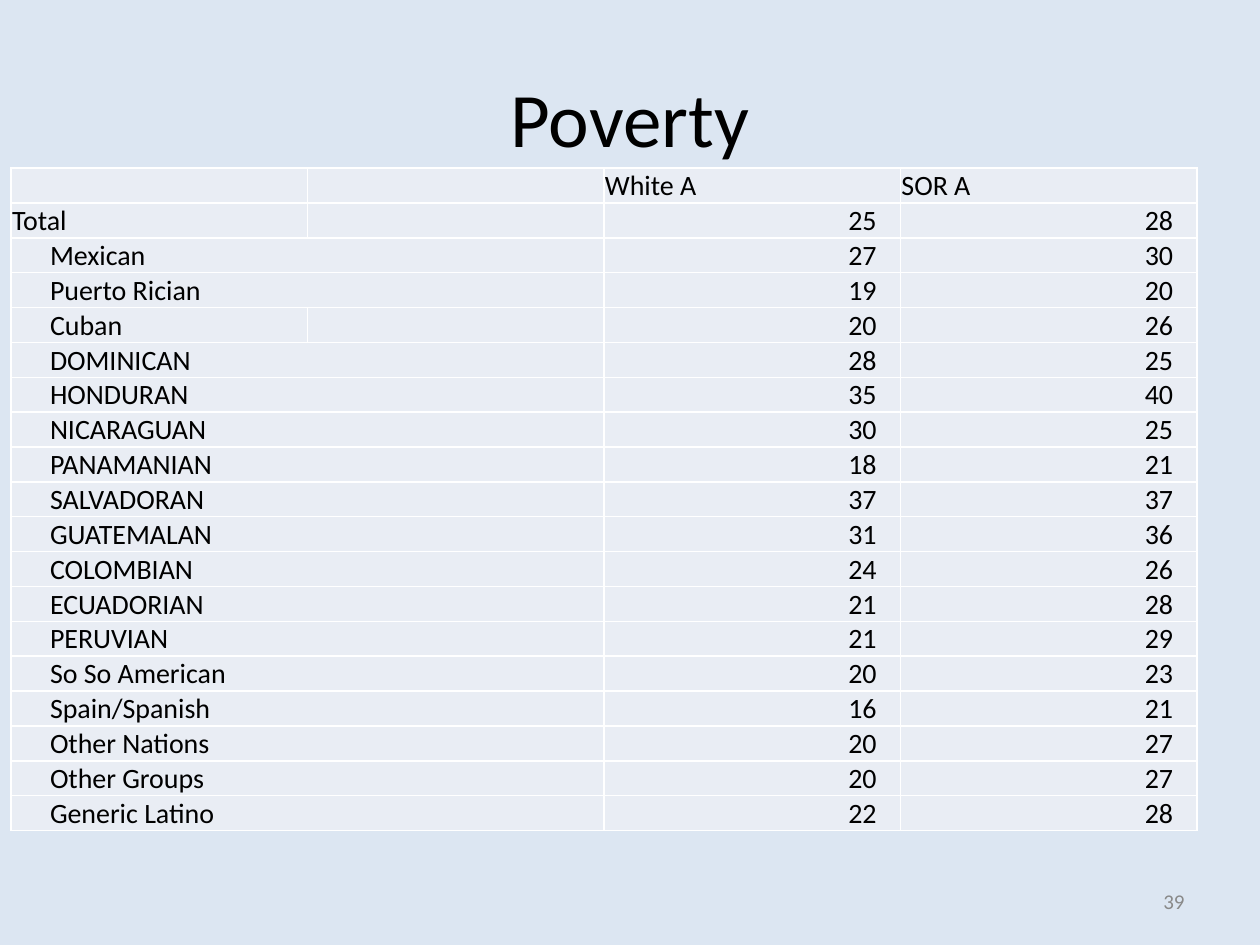
from lxml import etree
from pptx import Presentation
from pptx.dml.color import RGBColor
from pptx.enum.text import MSO_ANCHOR, PP_ALIGN
from pptx.oxml.ns import qn
from pptx.util import Pt

EMU_PER_PX = 914400 / 126
LEFT, CENTER, RIGHT = PP_ALIGN.LEFT, PP_ALIGN.CENTER, PP_ALIGN.RIGHT
MIDDLE, BOTTOM = MSO_ANCHOR.MIDDLE, MSO_ANCHOR.BOTTOM
TITLE_ONLY = 5
INDENT, NUMBER_INSET = 39, 24
SPLIT_ROWS = ("", "Total", "Cuban")
FLUSH_ROWS = ("", "Total")

POVERTY = [
    ("", "White A", "SOR A"),
    ("Total", 25, 28),
    ("Mexican", 27, 30),
    ("Puerto Rician", 19, 20),
    ("Cuban", 20, 26),
    ("DOMINICAN", 28, 25),
    ("HONDURAN", 35, 40),
    ("NICARAGUAN", 30, 25),
    ("PANAMANIAN", 18, 21),
    ("SALVADORAN", 37, 37),
    ("GUATEMALAN", 31, 36),
    ("COLOMBIAN", 24, 26),
    ("ECUADORIAN", 21, 28),
    ("PERUVIAN", 21, 29),
    ("So So American", 20, 23),
    ("Spain/Spanish", 16, 21),
    ("Other Nations", 20, 27),
    ("Other Groups", 20, 27),
    ("Generic Latino", 22, 28),
]


def px(length):
    """Turn pixels into EMU."""
    return round(length * EMU_PER_PX)


def color(value):
    """Turn a hex string into a colour."""
    return RGBColor.from_string(value)


def assign(target, values):
    """Set every attribute named in a dict."""
    for name, value in values.items():
        setattr(target, name, value)


class SlideBuilder:
    """Hold the style and the current slide."""

    font = "Calibri"
    ink = "000000"
    cell_fill = "E9EDF4"
    border = "FFFFFF"
    cell_size = 16

    def __init__(self, deck, background):
        """Add a title-only page with a plain background."""
        self.page = deck.slides.add_slide(deck.slide_layouts[TITLE_ONLY])
        fill = self.page.background.fill
        fill.solid()
        fill.fore_color.rgb = color(background)

    def paragraph(self, frame, text, size, align, ink):
        """Put one styled paragraph into a text frame."""
        para = frame.paragraphs[0]
        para.alignment = align
        if text:
            span = para.add_run()
            span.text = text
            assign(span.font, {"name": self.font, "size": Pt(size), "bold": False})
            span.font.color.rgb = color(ink)
        etree.SubElement(para._p, qn("a:endParaRPr"), sz=str(size * 100))

    def title(self, text, left, top, width, height):
        """Place and format the title placeholder."""
        box = self.page.shapes.title
        assign(box, {"left": px(left), "top": px(top), "width": px(width), "height": px(height)})
        box.text_frame.vertical_anchor = MIDDLE
        self.paragraph(box.text_frame, text, 44, CENTER, self.ink)

    def text(self, text, left, top, width, height, size, align, ink):
        """Add a wrapped text box."""
        box = self.page.shapes.add_textbox(px(left), px(top), px(width), px(height))
        assign(box.text_frame, {"word_wrap": True, "vertical_anchor": MIDDLE})
        self.paragraph(box.text_frame, text, size, align, ink)

    def cell(self, cell, text, align=LEFT, left=1, right=1):
        """Format one table cell and set its text."""
        assign(cell, {
            "margin_left": px(left), "margin_right": px(right),
            "margin_top": px(1), "margin_bottom": 0, "vertical_anchor": BOTTOM,
        })
        properties = cell._tc.get_or_add_tcPr()
        for side in ("L", "R", "T", "B"):
            line = etree.SubElement(properties, qn(f"a:ln{side}"), w=str(Pt(1)))
            paint = etree.SubElement(line, qn("a:solidFill"))
            etree.SubElement(paint, qn("a:srgbClr"), val=self.border)
        cell.fill.solid()
        cell.fill.fore_color.rgb = color(self.cell_fill)
        self.paragraph(cell.text_frame, text, self.cell_size, align, self.ink)

    def table(self, rows, left, top, width, height):
        """Add a table whose labels span two columns unless split."""
        table = self.page.shapes.add_table(
            len(rows), 4, px(left), px(top), px(width), px(height)).table
        assign(table, {"first_row": False, "horz_banding": False})
        for index, (label, *values) in enumerate(rows):
            self.cell(table.cell(index, 0), label, left=1 if label in FLUSH_ROWS else INDENT)
            self.cell(table.cell(index, 1), "")
            if label not in SPLIT_ROWS:
                table.cell(index, 0).merge(table.cell(index, 1))
            for column, value in enumerate(values, 2):
                layout = {} if isinstance(value, str) else {"align": RIGHT, "right": NUMBER_INSET}
                self.cell(table.cell(index, column), str(value), **layout)


def main():
    """Build the poverty slide."""
    deck = Presentation()
    assign(deck, {"slide_width": px(1260), "slide_height": px(945)})
    slide = SlideBuilder(deck, "DCE6F2")
    slide.title("Poverty", 63, 38, 1134, 157)
    slide.text("39", 903, 876, 294, 50, 12, RIGHT, "898989")
    slide.table(POVERTY, 11, 168, 1186, 663)
    deck.save("out.pptx")


if __name__ == "__main__":
    main()
